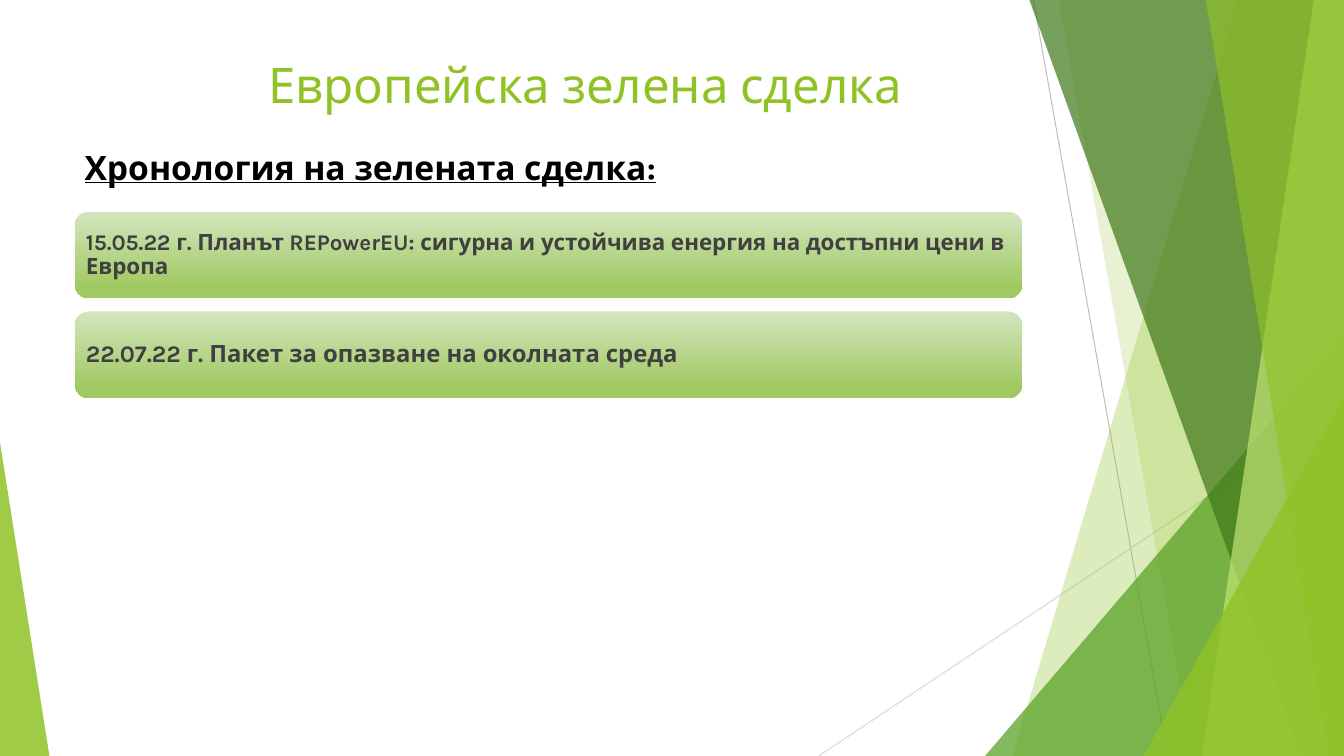
from dataclasses import dataclass

from lxml import etree
from pptx import Presentation
from pptx.dml.color import RGBColor
from pptx.enum.shapes import MSO_CONNECTOR as Connector, MSO_SHAPE as Shape
from pptx.enum.text import MSO_ANCHOR as Anchor, PP_ALIGN as Align
from pptx.oxml.ns import qn
from pptx.util import Inches, Pt

WIDTH, HEIGHT = 13.33, 7.5

TITLE = "Европейска зелена сделка"
HEADING = "Хронология на зелената сделка:"
MILESTONES = [
    ("15.05.22 г. Планът REPowerEU: сигурна и устойчива енергия на достъпни цени в Европа", 16),
    ("22.07.22 г. Пакет за опазване на околната среда", 17),
]


@dataclass(frozen=True)
class Theme:
    font: str = "Karla"
    title_size: float = 35.1
    heading_size: float = 24
    green: str = "90C226"
    leaf: str = "54A021"
    forest: str = "3F7819"
    lime: str = "C0E474"
    black: str = "000000"
    body: str = "404040"
    card_top: str = "D3E5BE"
    card_bottom: str = "A0C962"
    steep_line: str = "BFBFBF"
    shallow_line: str = "D9D9D9"


THEME = Theme()

RAYS = [
    ((10.25, 0), (11.58, HEIGHT), THEME.steep_line),
    ((WIDTH, 4.03), (8.12, HEIGHT), THEME.shallow_line),
]
# kind, geometry, colour, opacity in percent
FACETS = [
    ("band", (12.28, 10.04), THEME.green, 30),
    ("band", (10.5, 11.83), THEME.green, 20),
    ("triangle", (9.77, 3.33, 3.56, 1), THEME.leaf, 72),
    ("band", (10.21, 12.91), THEME.forest, 70),
    ("band", (13.03, 11.92), THEME.lime, 70),
    ("band", (11.96, 13.18), THEME.green, 65),
    ("triangle", (11.34, 3.93, 1.99, 1), THEME.green, 80),
    ("triangle", (0, 4.39, 0.49, 0), THEME.green, 85),
]

CARD_LEFT, CARD_TOP, CARD_WIDTH, CARD_HEIGHT = 0.74, 2.1, 9.4, 0.86
CARD_PITCH = 0.99
CARD_INSET = 0.07


def rgb(color):
    return RGBColor.from_string(color)


def add_ray(page, start, end, color):
    ray = page.shapes.add_connector(
        Connector.STRAIGHT, *(Inches(v) for v in (*start, *end)))
    ray.line.color.rgb = rgb(color)
    ray.line.width = Pt(0.75)
    etree.SubElement(ray._element.spPr, qn("a:effectLst"))


def add_band(page, top_x, bottom_x):
    builder = page.shapes.build_freeform(Inches(top_x), 0)
    corners = [(WIDTH, 0), (WIDTH, HEIGHT), (bottom_x, HEIGHT)]
    builder.add_line_segments([(Inches(x), Inches(y)) for x, y in corners])
    return builder.convert_to_shape()


def add_triangle(page, left, top, width, apex):
    triangle = page.shapes.add_shape(
        Shape.ISOSCELES_TRIANGLE,
        *(Inches(v) for v in (left, top, width, HEIGHT - top)))
    triangle.adjustments[0] = apex
    return triangle


def add_facet(page, kind, geometry, color, opacity):
    build = {"band": add_band, "triangle": add_triangle}[kind]
    facet = build(page, *geometry)
    facet.shadow.inherit = False
    facet.line.fill.background()
    facet.fill.solid()
    facet.fill.fore_color.rgb = rgb(color)
    srgb = facet._element.spPr.find(".//" + qn("a:srgbClr"))
    etree.SubElement(srgb, qn("a:alpha"), val=str(opacity * 1000))


def write(box, text, size, color, align=Align.LEFT, bold=False, underline=False):
    box.text_frame.word_wrap = True
    para = box.text_frame.paragraphs[0]
    para.alignment = align
    span = para.add_run()
    span.text = text
    span.font.name = THEME.font
    span.font.size = Pt(size)
    span.font.color.rgb = rgb(color)
    span.font.bold = bold
    span.font.underline = underline
    return para


def add_text(page, left, top, *content, **style):
    box = page.shapes.add_textbox(*(Inches(v) for v in (left, top, 9.01, 0.69)))
    write(box, *content, **style)


def add_card(page, index, text, size):
    top = CARD_TOP + index * CARD_PITCH
    card = page.shapes.add_shape(
        Shape.ROUNDED_RECTANGLE,
        *(Inches(v) for v in (CARD_LEFT, top, CARD_WIDTH, CARD_HEIGHT)))
    card.shadow.inherit = False
    card.line.fill.background()
    card.fill.gradient()
    card.fill.gradient_angle = 270
    stops = ((0, THEME.card_top), (0.88, THEME.card_bottom))
    for stop, (position, color) in zip(card.fill.gradient_stops, stops):
        stop.position = position
        stop.color.rgb = rgb(color)
    frame = card.text_frame
    frame.vertical_anchor = Anchor.MIDDLE
    frame.margin_left = frame.margin_right = Inches(CARD_INSET)
    frame.margin_top = frame.margin_bottom = Inches(CARD_INSET)
    para = write(card, text, size, THEME.body, bold=True)
    para.line_spacing = 0.9


def main():
    deck = Presentation()
    deck.slide_width, deck.slide_height = Inches(WIDTH), Inches(HEIGHT)
    page = deck.slides.add_slide(deck.slide_layouts[6])
    for ray in RAYS:
        add_ray(page, *ray)
    for facet in FACETS:
        add_facet(page, *facet)
    add_text(page, CARD_LEFT, 1.41, HEADING, THEME.heading_size, THEME.black,
             bold=True, underline=True)
    for index, milestone in enumerate(MILESTONES):
        add_card(page, index, *milestone)
    add_text(page, 1.3, 0.49, TITLE, THEME.title_size, THEME.green, align=Align.CENTER)
    deck.save("out.pptx")


if __name__ == "__main__":
    main()
